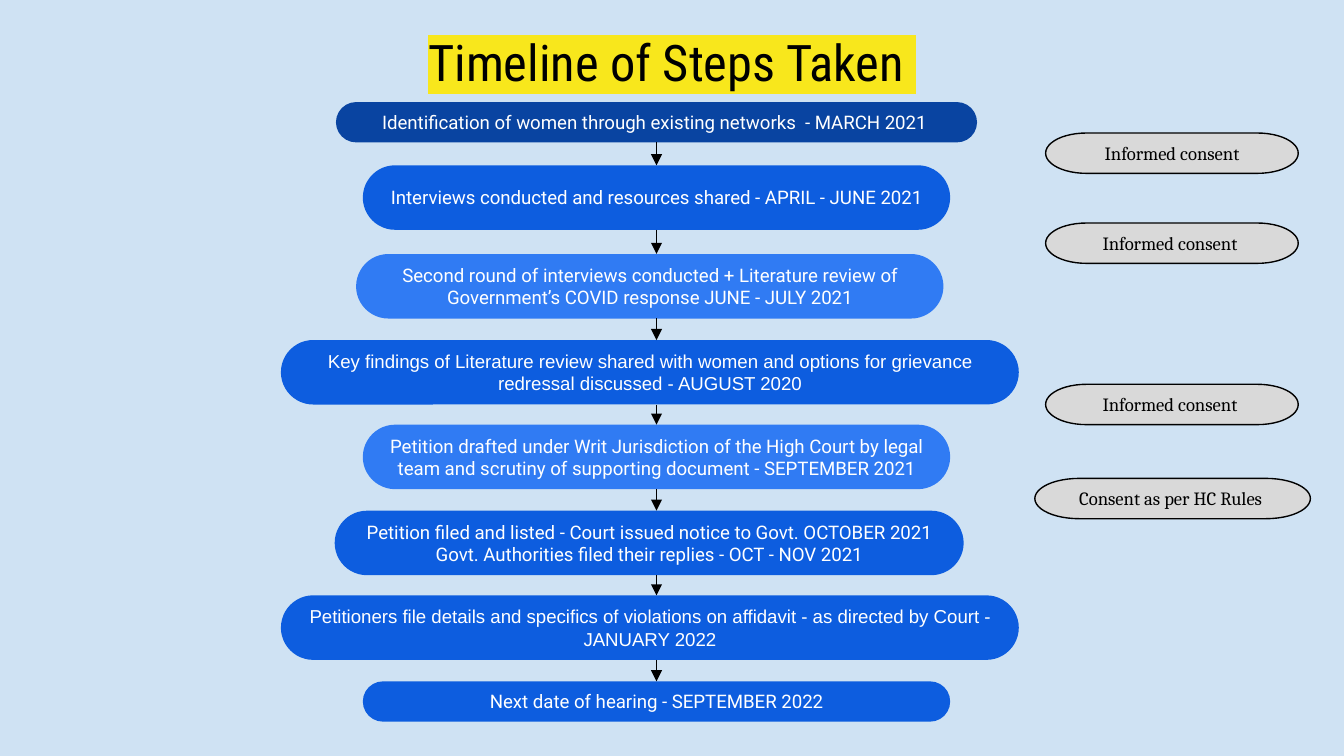
from dataclasses import dataclass
from itertools import pairwise

from pptx import Presentation
from pptx.dml.color import RGBColor
from pptx.enum.shapes import MSO_CONNECTOR, MSO_SHAPE
from pptx.enum.text import MSO_ANCHOR, MSO_AUTO_SIZE, PP_ALIGN
from pptx.oxml.ns import qn
from pptx.shapes.autoshape import Shape
from pptx.slide import Slide
from pptx.text.text import TextFrame
from pptx.util import Inches, Pt
from lxml.etree import SubElement

BACKGROUND = RGBColor(0xCF, 0xE2, 0xF3)
HIGHLIGHT = RGBColor(0xF8, 0xE7, 0x1C)
NAVY = RGBColor(0x09, 0x44, 0xA1)
BLUE = RGBColor(0x0D, 0x5D, 0xDF)
LIGHT_BLUE = RGBColor(0x30, 0x7B, 0xF3)
GREY = RGBColor(0xD9, 0xD9, 0xD9)
BLACK = RGBColor(0x00, 0x00, 0x00)
WHITE = RGBColor(0xFF, 0xFF, 0xFF)

BOTTOM_SITE, TOP_SITE = 2, 0
SHORT, TALL = 0.3, 0.48


@dataclass(frozen=True)
class Step:
    text: str
    left: float
    top: float
    width: float
    height: float = TALL
    color: RGBColor = BLUE
    font: str = "Roboto"


@dataclass(frozen=True)
class Consent:
    text: str
    top: float
    left: float = 7.78
    width: float = 1.88


STEPS = [
    Step("Identification of women through existing networks  - MARCH 2021 ",
         2.5, 0.76, 4.77, SHORT, NAVY),
    Step("Interviews conducted and resources shared - APRIL - JUNE 2021", 2.7, 1.23, 4.37),
    Step("Second round of interviews conducted + Literature review of "
         "Government’s COVID response JUNE - JULY 2021",
         2.65, 1.89, 4.37, color=LIGHT_BLUE),
    Step("Key findings of Literature review shared with women and options for "
         "grievance redressal discussed - AUGUST 2020",
         2.09, 2.53, 5.49, font="Arial"),
    Step("Petition drafted under Writ Jurisdiction of the High Court by legal team "
         "and scrutiny of supporting document - SEPTEMBER 2021",
         2.7, 3.16, 4.37, color=LIGHT_BLUE),
    Step("Petition filed and listed - Court issued notice to Govt. OCTOBER 2021\n"
         "Govt. Authorities filed their replies - OCT - NOV 2021",
         2.49, 3.8, 4.68),
    Step("Petitioners file details and specifics of violations on affidavit - "
         "as directed by Court - JANUARY 2022",
         2.09, 4.43, 5.49, font="Arial"),
    Step("Next date of hearing - SEPTEMBER 2022", 2.7, 5.07, 4.37, SHORT),
]

CONSENTS = [
    Consent("Informed consent", 0.99),
    Consent("Informed consent ", 1.66),
    Consent("Informed consent ", 2.86),
    Consent("Consent as per HC Rules ", 3.56, 7.7, 2.05),
]


def write_text(frame: TextFrame, text: str, font: str, size: float, color: RGBColor) -> None:
    frame.text = text
    frame.word_wrap = True
    frame.margin_left = frame.margin_right = Inches(0.1)
    frame.margin_top = frame.margin_bottom = Inches(0.1)
    for paragraph in frame.paragraphs:
        paragraph.alignment = PP_ALIGN.CENTER
        paragraph.font.name = font
        paragraph.font.size = Pt(size)
        paragraph.font.color.rgb = color


def add_title(slide: Slide) -> None:
    title = slide.shapes.title
    title.left, title.top = Inches(0.34), Inches(0.13)
    title.width, title.height = Inches(9.32), Inches(0.63)
    frame = title.text_frame
    write_text(frame, "Timeline of Steps Taken ", "Roboto Condensed", 27, BLACK)
    frame.auto_size = MSO_AUTO_SIZE.NONE
    frame.vertical_anchor = MSO_ANCHOR.TOP
    properties = frame.paragraphs[0].runs[0]._r.get_or_add_rPr()
    highlight = SubElement(properties, qn("a:highlight"))
    SubElement(highlight, qn("a:srgbClr"), val=str(HIGHLIGHT))


def add_box(slide: Slide, kind: MSO_SHAPE, left: float, top: float, width: float,
            height: float, color: RGBColor) -> Shape:
    shape = slide.shapes.add_shape(
        kind, Inches(left), Inches(top), Inches(width), Inches(height))
    shape.shadow.inherit = False
    shape.fill.solid()
    shape.fill.fore_color.rgb = color
    shape.text_frame.vertical_anchor = MSO_ANCHOR.MIDDLE
    return shape


def add_step(slide: Slide, step: Step) -> Shape:
    shape = add_box(slide, MSO_SHAPE.ROUNDED_RECTANGLE, step.left, step.top,
                    step.width, step.height, step.color)
    shape.adjustments[0] = 0.5
    shape.line.fill.background()
    write_text(shape.text_frame, step.text, step.font, 10, WHITE)
    return shape


def add_consent(slide: Slide, consent: Consent) -> None:
    shape = add_box(slide, MSO_SHAPE.FLOWCHART_TERMINATOR, consent.left, consent.top,
                    consent.width, SHORT, GREY)
    shape.line.color.rgb = BLACK
    shape.line.width = Pt(0.75)
    write_text(shape.text_frame, consent.text, "Cambria", 10, BLACK)


def is_centred(shape: Shape, axis: int) -> bool:
    return abs(shape.left + shape.width // 2 - axis) < Inches(0.01)


def add_arrow(slide: Slide, upper: Shape, lower: Shape, axis: int) -> None:
    arrow = slide.shapes.add_connector(
        MSO_CONNECTOR.STRAIGHT, axis, upper.top + upper.height, axis, lower.top)
    if is_centred(upper, axis):
        arrow.begin_connect(upper, BOTTOM_SITE)
    if is_centred(lower, axis):
        arrow.end_connect(lower, TOP_SITE)
    arrow.line.color.rgb = BLACK
    arrow.line.width = Pt(0.75)
    SubElement(arrow.line._get_or_add_ln(), qn("a:tailEnd"), type="triangle")
    SubElement(arrow._element.spPr, qn("a:effectLst"))


def main() -> None:
    presentation = Presentation()
    presentation.slide_width = Inches(10)
    presentation.slide_height = presentation.slide_width * 9 // 16
    slide = presentation.slides.add_slide(presentation.slide_layouts[5])
    slide.background.fill.solid()
    slide.background.fill.fore_color.rgb = BACKGROUND

    add_title(slide)
    boxes = [add_step(slide, step) for step in STEPS]
    for consent in CONSENTS:
        add_consent(slide, consent)
    axis = boxes[0].left + boxes[0].width // 2
    for upper, lower in pairwise(boxes):
        add_arrow(slide, upper, lower, axis)

    presentation.save("out.pptx")


if __name__ == "__main__":
    main()
